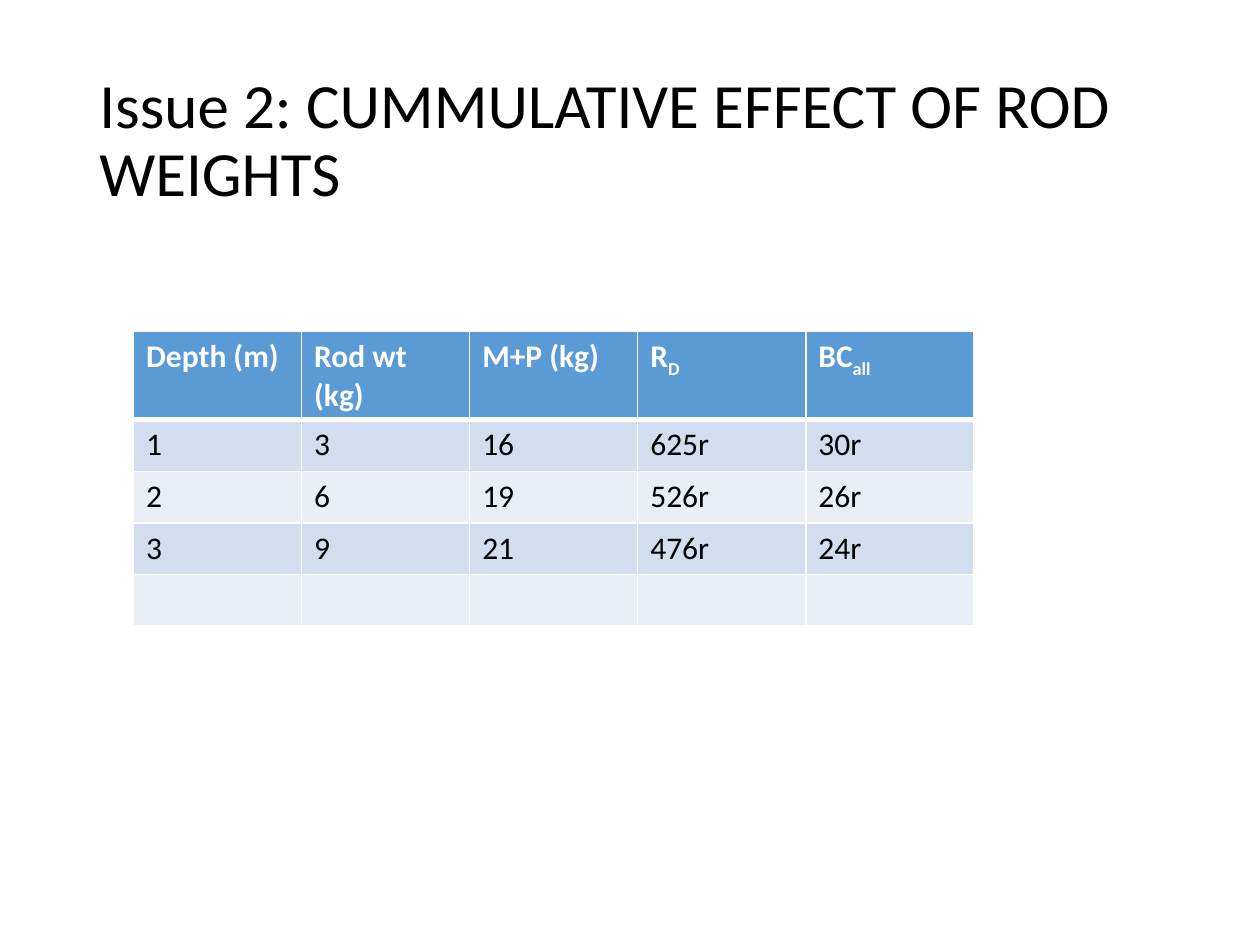
"""Build the slide on the cumulative effect of rod weights."""
from lxml.etree import SubElement
from pptx import Presentation
from pptx.dml.color import RGBColor
from pptx.enum.text import MSO_ANCHOR
from pptx.oxml.ns import qn
from pptx.util import Inches, Pt


def paint(fill, color):
    fill.solid()
    fill.fore_color.rgb = RGBColor.from_string(color)


def add_run(paragraph, text, color, **formats):
    run = paragraph.add_run()
    run.text = text
    for attribute, value in formats.items():
        setattr(run.font, attribute, value)
    paint(run.font.fill, color)
    return run


deck = Presentation()
deck.slide_width, deck.slide_height = Inches(10), Inches(7.5)
slide = deck.slides.add_slide(deck.slide_layouts[6])

heading = slide.shapes.add_textbox(
    Inches(0.69), Inches(0.4), Inches(8.62), Inches(1.45)).text_frame
heading.word_wrap = True
heading.vertical_anchor = MSO_ANCHOR.MIDDLE
heading.paragraphs[0].line_spacing = 0.9
add_run(heading.paragraphs[0], "Issue 2: CUMMULATIVE EFFECT OF ROD WEIGHTS",
        "000000", name="Calibri", size=Pt(36))

rod_rows = [
    [("Depth (m)", ""), ("Rod wt (kg)", ""), ("M+P (kg)", ""), ("R", "D"), ("BC", "all")],
    [("1", ""), ("3", ""), ("16", ""), ("625r", ""), ("30r", "")],
    [("2", ""), ("6", ""), ("19", ""), ("526r", ""), ("26r", "")],
    [("3", ""), ("9", ""), ("21", ""), ("476r", ""), ("24r", "")],
    [("", "")] * 5,
]
row_height = 0.41
rod_weights = slide.shapes.add_table(
    len(rod_rows), len(rod_rows[0]), Inches(1.06), Inches(2.63),
    Inches(6.67), Inches(row_height * len(rod_rows))).table

for row, entries in enumerate(rod_rows):
    is_header = row == 0
    band = "5B9BD5" if is_header else ("EAEFF7", "D2DEEF")[row % 2]
    ink = "FFFFFF" if is_header else "000000"
    edges = {"L": 1, "R": 1, "T": 3 if row == 1 else 1, "B": 3 if is_header else 1}
    for column, (text, subscript) in enumerate(entries):
        cell = rod_weights.cell(row, column)
        properties = cell._tc.get_or_add_tcPr()
        for side, points in edges.items():
            edge = SubElement(properties, qn(f"a:ln{side}"), w=str(Pt(points)))
            SubElement(SubElement(edge, qn("a:solidFill")), qn("a:srgbClr"), val="FFFFFF")
        paint(cell.fill, band)
        for part, baseline in ((text, "0"), (subscript, "-25000")):
            if part:
                run = add_run(cell.text_frame.paragraphs[0], part, ink,
                              name="Calibri", size=Pt(18), bold=is_header)
                run.font._element.set("baseline", baseline)

deck.save("out.pptx")
